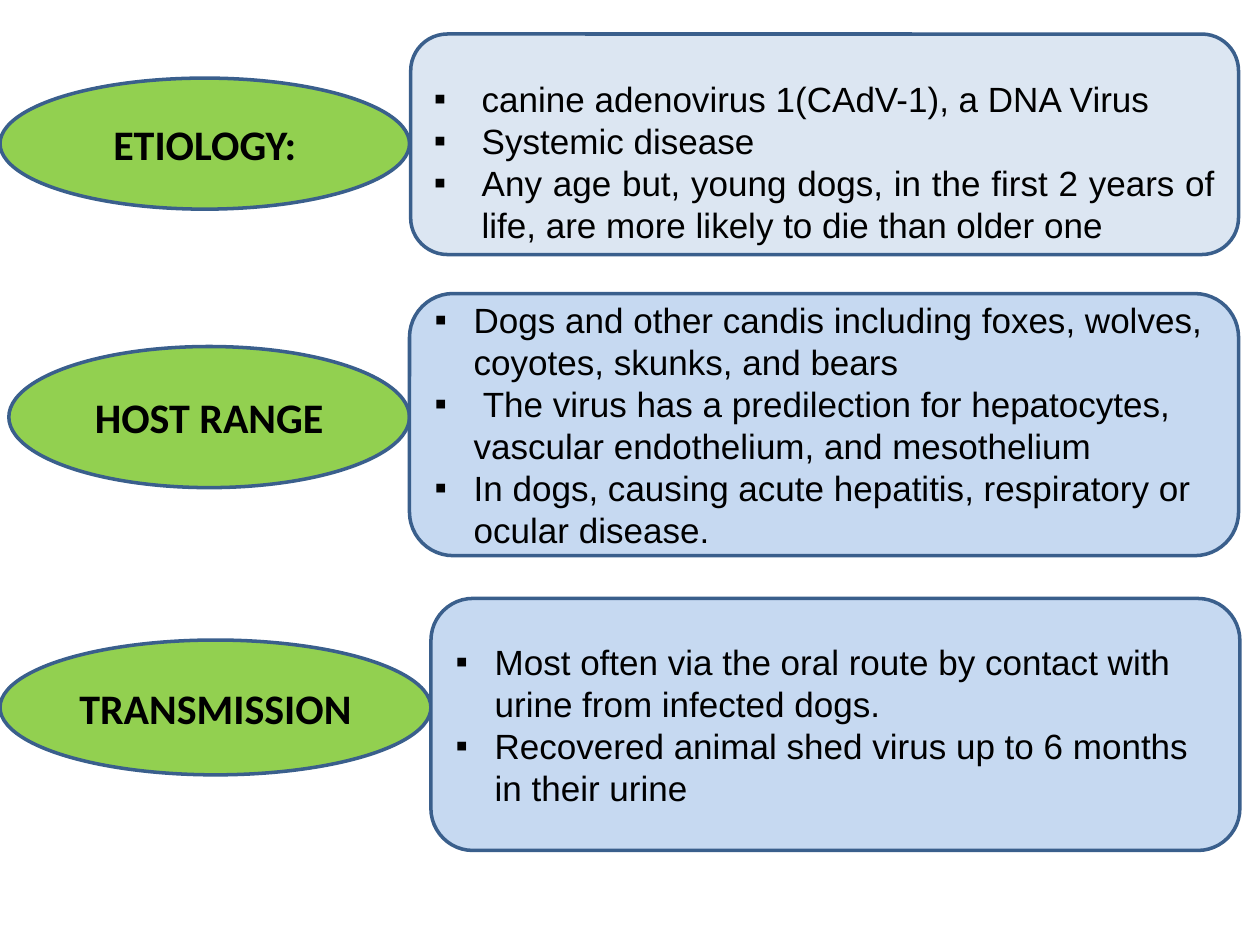
from lxml import etree
from pptx import Presentation
from pptx.dml.color import RGBColor
from pptx.enum import shapes, text
from pptx.oxml import ns
from pptx.util import Inches, Pt

COLORS = {"label": "92D050", "pale": "DCE6F2", "blue": "C6D9F1",
          "line": "3A5F8C", "text": "000000"}

SECTIONS = [
    ("ETIOLOGY:", (0, 0.62, 3.25, 1.04), (3.26, 0.27, 6.57, 1.75), "pale", 0.38,
     (0.27, 0),
     ["canine adenovirus 1(CAdV-1), a DNA Virus",
      "Systemic disease",
      "Any age but, young dogs, in the first 2 years of life, "
      "are more likely to die than older one"]),
    ("HOST RANGE", (0.07, 2.75, 3.18, 1.12), (3.25, 2.33, 6.58, 2.08), "blue", 0.31,
     (0.05, 0.05),
     ["Dogs and other candis including foxes, wolves, coyotes, skunks, and bears",
      " The virus has a predilection for hepatocytes, vascular endothelium, "
      "and mesothelium",
      "In dogs, causing acute hepatitis, respiratory or ocular disease."]),
    ("TRANSMISSION", (0, 5.08, 3.42, 1.07), (3.42, 4.75, 6.42, 2), "blue", 0.31,
     (0.05, 0.05),
     ["Most often via the oral route by contact with urine from infected dogs.",
      "Recovered animal shed virus up to 6 months in their urine"]),
]


def add_panel(s, kind, box, fill):
    """Add an outlined, filled shape with middle-anchored text."""
    sp = s.shapes.add_shape(kind, *map(Inches, box))
    sp.shadow.inherit = False
    sp.fill.solid()
    sp.fill.fore_color.rgb = RGBColor.from_string(COLORS[fill])
    sp.line.color.rgb = RGBColor.from_string(COLORS["line"])
    sp.line.width = Pt(2)
    sp.text_frame.word_wrap = True
    sp.text_frame.vertical_anchor = text.MSO_ANCHOR.MIDDLE
    return sp


def format_runs(p, name, size, bold=False):
    """Set the font of every run in a paragraph."""
    for r in p.runs:
        r.font.name = name
        r.font.size = Pt(size)
        r.font.bold = bold
        r.font.color.rgb = RGBColor.from_string(COLORS["text"])


def add_bullet(p, indent):
    """Give a paragraph a square bullet with a hanging indent."""
    pPr = p._p.get_or_add_pPr()
    pPr.set("marL", str(Inches(indent)))
    pPr.set("indent", str(-Inches(indent)))
    etree.SubElement(pPr, ns.qn("a:buFont")).set("typeface", "Arial")
    etree.SubElement(pPr, ns.qn("a:buChar")).set("char", "▪")


def add_label(s, box, title):
    """Place a section title in an ellipse."""
    sp = add_panel(s, shapes.MSO_SHAPE.OVAL, box, "label")
    sp.text_frame.text = title
    p = sp.text_frame.paragraphs[0]
    p.alignment = text.PP_ALIGN.CENTER
    format_runs(p, "Calibri", 24, True)


def add_details(s, box, fill, indent, margins, items):
    """Place a bulleted list in a rounded rectangle."""
    sp = add_panel(s, shapes.MSO_SHAPE.ROUNDED_RECTANGLE, box, fill)
    tf = sp.text_frame
    tf.margin_top, tf.margin_bottom = map(Inches, margins)
    tf.text = "\n".join(items)
    for p in tf.paragraphs:
        justified = fill == "pale" and p.text == items[-1]
        p.alignment = text.PP_ALIGN.JUSTIFY if justified else text.PP_ALIGN.LEFT
        add_bullet(p, indent)
        format_runs(p, "Arial", 20)


def main():
    """Build and save the slide."""
    prs = Presentation()
    prs.slide_width, prs.slide_height = Inches(10), Inches(7.5)
    s = prs.slides.add_slide(prs.slide_layouts[6])
    for title, label_box, box, fill, indent, margins, items in SECTIONS:
        add_label(s, label_box, title)
        add_details(s, box, fill, indent, margins, items)
    prs.save("out.pptx")


if __name__ == "__main__":
    main()
